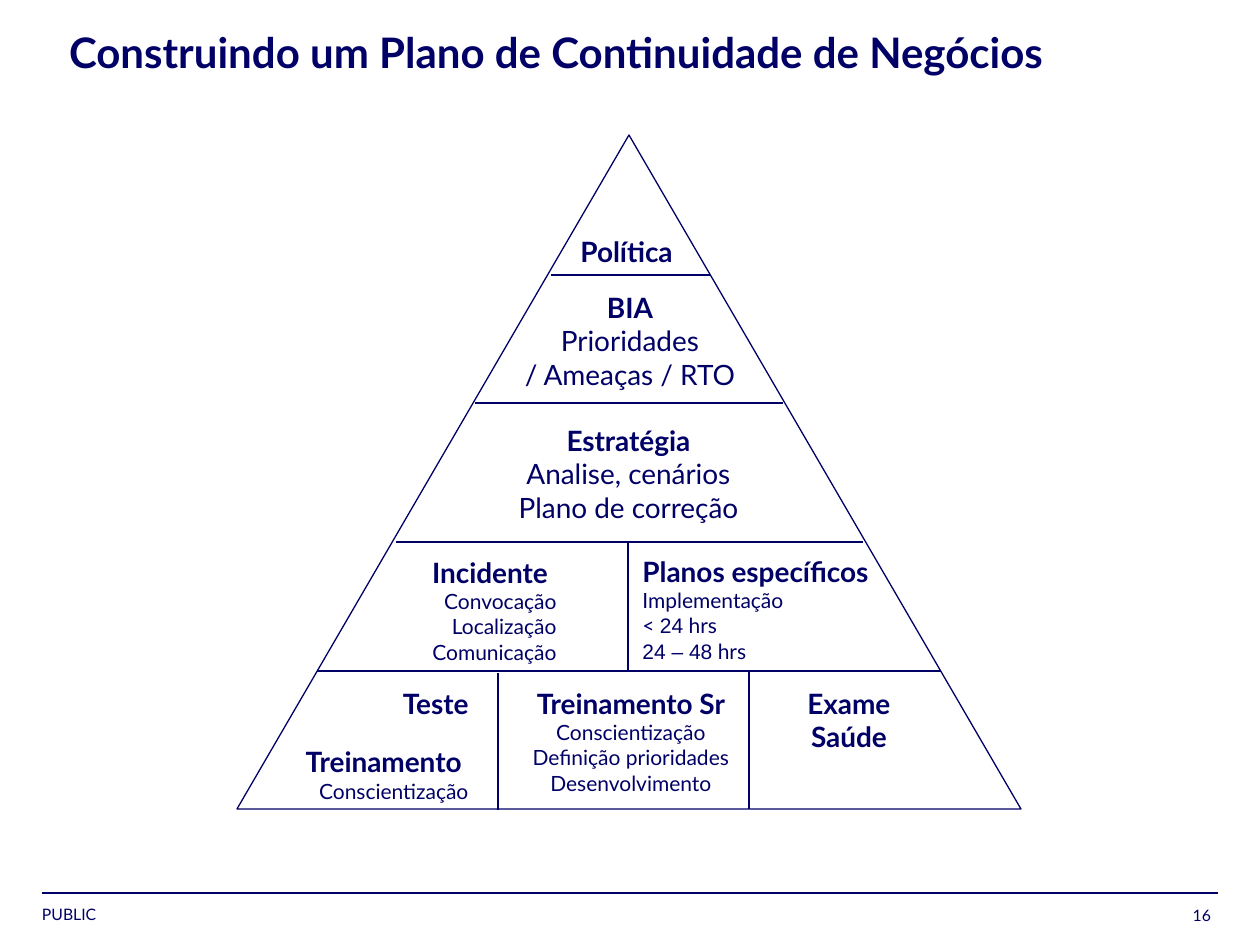
from lxml import etree
from pptx import Presentation
from pptx import util as u
from pptx.dml.color import RGBColor
from pptx.enum import shapes, text
from pptx.oxml.ns import qn

COLORS = {"navy": "000066"}
FONT, DIGIT_FONT = "Lato", "Arial"
LEFT, CENTER, RIGHT = (text.PP_ALIGN.LEFT, text.PP_ALIGN.CENTER,
                       text.PP_ALIGN.RIGHT)
HEAD, BODY, NOTE = (16, True), (16, False), (12, False)  # size, bold

LEVELS = [(551, 710, 275), (475, 783, 403), (396, 863, 542), (317, 941, 671)]
DIVIDERS = [(628, 542, 671), (498, 673, 810), (749, 671, 809)]

# box in px, alignment, then (text or runs, style) per paragraph
LABELS = [
    ((568, 228, 121, 47), LEFT, [("Política", HEAD)]),
    ((512, 284, 236, 115), CENTER,
     [("BIA", HEAD), ("Prioridades", BODY), ("/ Ameaças / RTO", BODY)]),
    ((498, 417, 261, 115), CENTER,
     [("Estratégia", HEAD), ("Analise, cenários", BODY),
      ("Plano de correção", BODY)]),
    ((411, 549, 158, 123), RIGHT,
     [("Incidente", HEAD), ("Convocação", NOTE), ("Localização", NOTE),
      ("Comunicação", NOTE)]),
    ((630, 548, 258, 123), LEFT,
     [("Planos específicos", HEAD), ("Implementação", NOTE),
      ([("< ", FONT), ("24", DIGIT_FONT), (" hrs", FONT)], NOTE),
      ([("24 – 48", DIGIT_FONT), (" hrs", FONT)], NOTE)]),
    ((282, 680, 199, 131), RIGHT,
     [("Teste", HEAD), ("Treinamento ", HEAD), ("Conscientização", NOTE)]),
    ((512, 680, 238, 123), CENTER,
     [("Treinamento Sr", HEAD), ("Conscientização", NOTE),
      ("Definição prioridades", NOTE), ("Desenvolvimento", NOTE)]),
    ((793, 680, 112, 81), CENTER, [("Exame", HEAD), ("Saúde", HEAD)]),
]


def px(n):
    return u.Emu(round(n * 914400 / 126))


def color(name):
    return RGBColor.from_string(COLORS[name])


def write(p, content, style, align):
    """Fill a paragraph with a string or with (string, font name) runs."""
    p.alignment = align
    p.font.size, p.font.bold = u.Pt(style[0]), style[1]
    p.font.name = FONT
    p.font.color.rgb = color("navy")
    if isinstance(content, str):
        p.add_run().text = content
        return
    for words, name in content:
        r = p.add_run()
        r.text, r.font.name = words, name


def no_insets(tf):
    tf.margin_left = tf.margin_right = tf.margin_top = tf.margin_bottom = 0


def add_title(s, words):
    sp = s.shapes.title
    sp.left, sp.top, sp.width, sp.height = map(px, (69, 32, 1147, 144))
    tf = sp.text_frame
    no_insets(tf)
    tf.auto_size = text.MSO_AUTO_SIZE.NONE
    tf.vertical_anchor = text.MSO_ANCHOR.TOP
    write(tf.paragraphs[0], words, (24, True), LEFT)
    tf.paragraphs[0].line_spacing = 0.9


def add_line(s, x1, y1, x2, y2, width=0.75):
    line = s.shapes.add_connector(shapes.MSO_CONNECTOR.STRAIGHT,
                                  *map(px, (x1, y1, x2, y2)))
    line.line.color.rgb = color("navy")
    line.line.width = u.Pt(width)
    etree.SubElement(line._element.spPr, qn("a:effectLst"))


def add_pyramid(s):
    sp = s.shapes.add_shape(shapes.MSO_SHAPE.ISOSCELES_TRIANGLE,
                            *map(px, (237, 135, 784, 674)))
    sp.shadow.inherit = False
    sp.fill.background()
    sp.line.color.rgb = color("navy")
    sp.line.width = u.Pt(0.75)
    for x1, x2, y in LEVELS:
        add_line(s, x1, y, x2, y)
    for x, y1, y2 in DIVIDERS:
        add_line(s, x, y1, x, y2)


def add_label(s, box, align, lines):
    tf = s.shapes.add_textbox(*map(px, box)).text_frame
    tf.word_wrap = False
    tf.auto_size = text.MSO_AUTO_SIZE.SHAPE_TO_FIT_TEXT
    for i, (content, style) in enumerate(lines):
        p = tf.add_paragraph() if i else tf.paragraphs[0]
        write(p, content, style, align)
        if content == "Incidente":
            p.alignment = CENTER
        elif content == "Treinamento ":
            p.space_before = u.Pt(14.4)


def add_footer_text(s, box, words, align, anchor):
    tf = s.shapes.add_textbox(*map(px, box)).text_frame
    no_insets(tf)
    tf.word_wrap = True
    tf.vertical_anchor = anchor
    write(tf.paragraphs[0], words, (9, False), align)


def main():
    prs = Presentation()
    prs.slide_width, prs.slide_height = px(1260), px(945)
    s = prs.slides.add_slide(prs.slide_layouts[5])
    add_title(s, "Construindo um Plano de Continuidade de Negócios")
    add_pyramid(s)
    for box, align, lines in LABELS:
        add_label(s, box, align, lines)
    add_line(s, 42, 893, 1218, 893, 1)
    add_footer_text(s, (42, 905, 161, 19), "PUBLIC", LEFT, text.MSO_ANCHOR.TOP)
    add_footer_text(s, (1147, 905, 64, 20), "16", RIGHT,
                    text.MSO_ANCHOR.BOTTOM)
    prs.save("out.pptx")


if __name__ == "__main__":
    main()
